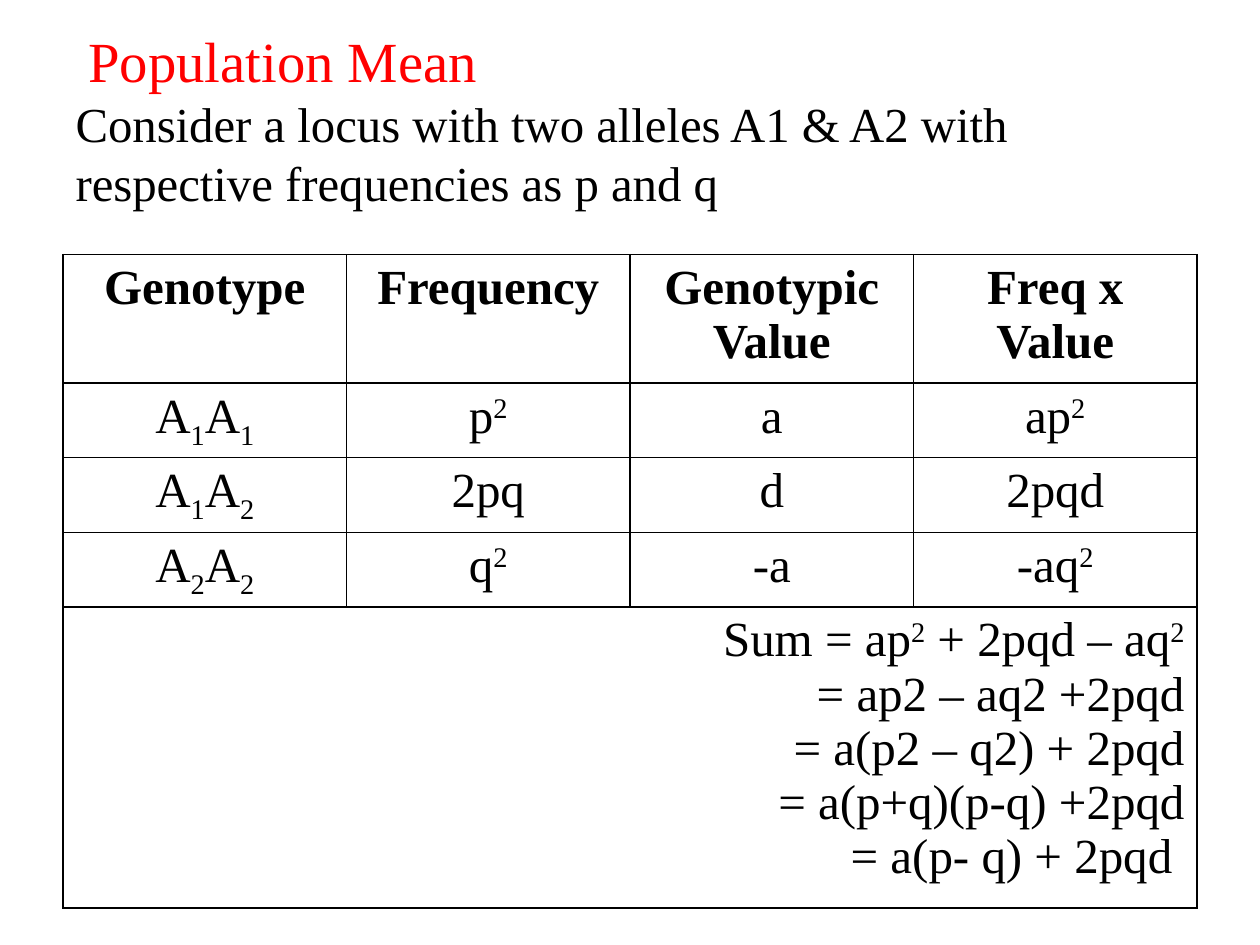
from lxml import etree
from pptx import Presentation
from pptx.dml import color
from pptx.enum import text
from pptx.oxml import ns
from pptx.util import Inches, Pt

FONT = "Times New Roman"
BLACK, RED = "000000", "FF0000"
BASELINES = {"_": "-25000", "^": "30000"}
ROW_HEIGHTS = [1.02, 0.59, 0.59, 0.59, 2.39]
HEADINGS = ["Genotype", "Frequency", "Genotypic Value", "Freq x Value"]
GENOTYPES = [
    ["A|_1|A|_1", "p|^2", "a", "ap|^2"],
    ["A|_1|A|_2", "2pq", "d", "2pqd"],
    ["A|_2|A|_2", "q|^2", "-a", "-aq|^2"],
]
DERIVATION = [
    "Sum = ap|^2| + 2pqd – aq|^2",
    "= ap2 – aq2 +2pqd",
    "= a(p2 – q2) + 2pqd",
    "= a(p+q)(p-q) +2pqd",
    "= a(p- q) + 2pqd ",
]


def rgb(value):
    """Turn a hex string into a colour."""
    return color.RGBColor.from_string(value)


def set_font(font, size, hue=BLACK, bold=False):
    """Set the typeface, size, colour and weight of a font."""
    font.name, font.size, font.bold = FONT, Pt(size), bold
    font.color.rgb = rgb(hue)


def add_title(page, left, top, width, height):
    """Place the red heading and the statement below it."""
    title = page.shapes.title
    title.left, title.top = Inches(left), Inches(top)
    title.width, title.height = Inches(width), Inches(height)
    frame = title.text_frame
    frame.auto_size = text.MSO_AUTO_SIZE.NONE
    frame.vertical_anchor = text.MSO_ANCHOR.MIDDLE
    para = frame.paragraphs[0]
    para.alignment = text.PP_ALIGN.LEFT
    statement = "Consider a locus with two alleles A1 & A2 with respective frequencies as p and q"
    for words, size, hue in [(" ", 28.8, RED), ("Population Mean", 32.4, RED),
                             (statement, 27.9, BLACK)]:
        if words == statement:
            para.add_line_break()
        span = para.add_run()
        span.text = words
        set_font(span.font, size, hue)


def add_borders(cell):
    """Draw a thin black line on every side of a cell."""
    properties = cell._tc.get_or_add_tcPr()
    for side in ("lnL", "lnR", "lnT", "lnB"):
        line = etree.SubElement(properties, ns.qn(f"a:{side}"), w=str(Pt(1)))
        fill = etree.SubElement(line, ns.qn("a:solidFill"))
        etree.SubElement(fill, ns.qn("a:srgbClr"), val=BLACK)


def fill_cell(cell, lines, alignment, bold=False):
    """Write lines in a cell, raising or lowering the marked pieces."""
    frame = cell.text_frame
    for index, line in enumerate(lines):
        para = frame.add_paragraph() if index else frame.paragraphs[0]
        para.alignment = alignment
        set_font(para.font, 28, bold=bold)
        for piece in line.split("|"):
            span = para.add_run()
            span.text = piece.lstrip("_^")
            set_font(span.font, 28, bold=bold)
            if piece[0] in BASELINES:
                span._r.get_or_add_rPr().set("baseline", BASELINES[piece[0]])


def add_genotype_table(page, left, top, width):
    """Place the genotype table with the derivation in its merged last row."""
    count = len(HEADINGS)
    table = page.shapes.add_table(len(ROW_HEIGHTS), count, Inches(left), Inches(top),
                                  Inches(width), Inches(sum(ROW_HEIGHTS))).table
    table.first_row = table.horz_banding = False
    for column in table.columns:
        column.width = Inches(width / count)
    for row, height in zip(table.rows, ROW_HEIGHTS):
        row.height = Inches(height)
    for cell in table.iter_cells():
        add_borders(cell)
        cell.fill.background()
    for row_index, values in enumerate([HEADINGS] + GENOTYPES):
        for column_index, value in enumerate(values):
            fill_cell(table.cell(row_index, column_index), [value],
                      text.PP_ALIGN.CENTER, bold=row_index == 0)
    last = len(ROW_HEIGHTS) - 1
    table.cell(last, 0).merge(table.cell(last, count - 1))
    fill_cell(table.cell(last, 0), DERIVATION, text.PP_ALIGN.RIGHT)


def main():
    """Build the slide and save it."""
    deck = Presentation()
    deck.slide_width, deck.slide_height = Inches(10), Inches(7.5)
    page = deck.slides.add_slide(deck.slide_layouts[5])
    add_title(page, 0.5, 0.16, 9, 1.56)
    add_genotype_table(page, 0.5, 2.02, 9)
    deck.save("out.pptx")


if __name__ == "__main__":
    main()
